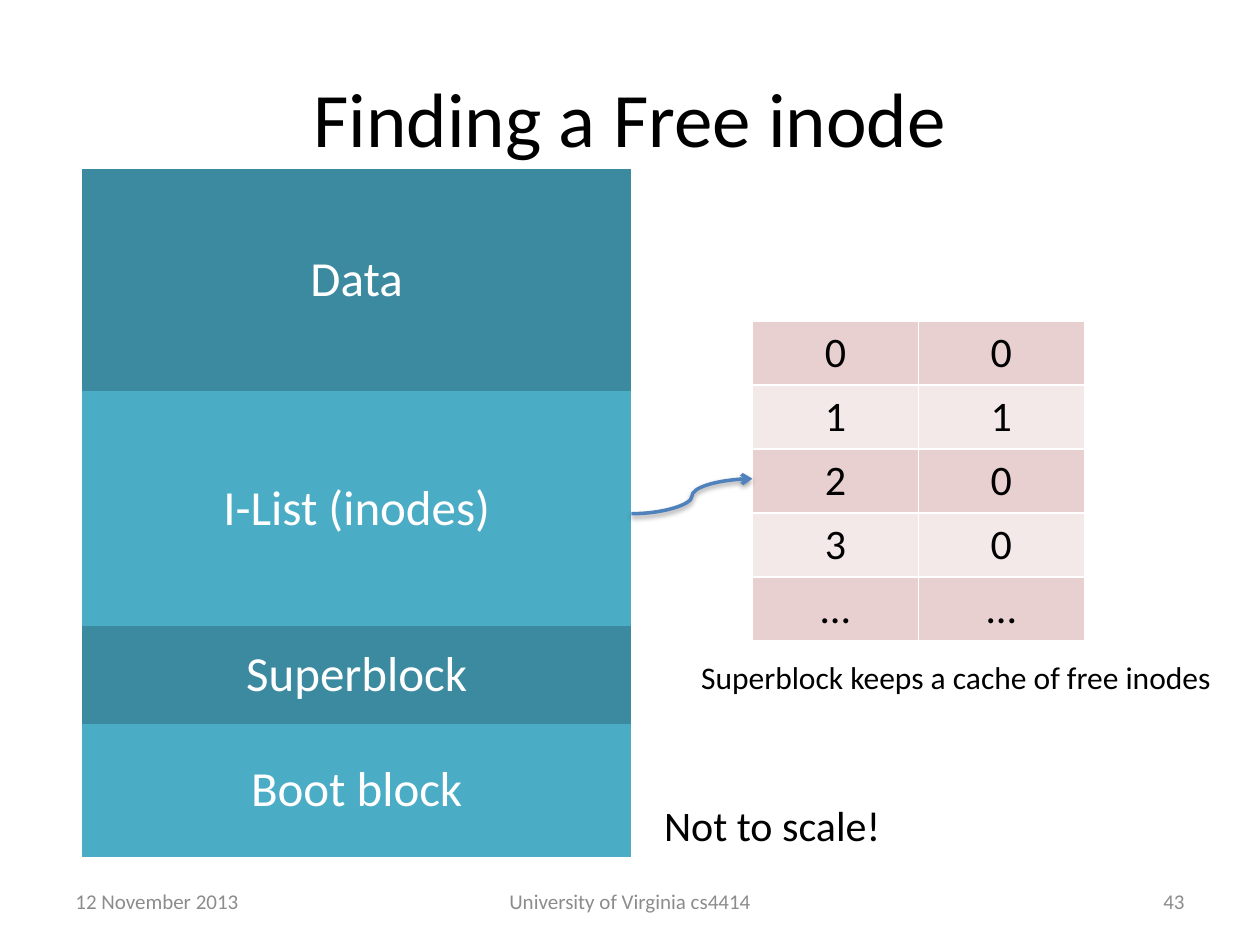
from dataclasses import dataclass

from lxml.etree import SubElement
from pptx import Presentation
from pptx.dml.color import RGBColor
from pptx.enum.shapes import MSO_CONNECTOR
from pptx.enum.text import MSO_ANCHOR as Anchor, PP_ALIGN as Align
from pptx.oxml import parse_xml
from pptx.oxml.ns import nsdecls, qn
from pptx.util import Pt

FONT = "Calibri"
BLACK = RGBColor(0x00, 0x00, 0x00)
WHITE = RGBColor(0xFF, 0xFF, 0xFF)
GRAY = RGBColor(0x8C, 0x8C, 0x8C)
DARK_TEAL = RGBColor(0x3C, 0x8A, 0x9F)
TEAL = RGBColor(0x4B, 0xAC, 0xC6)
DARK_PINK = RGBColor(0xE8, 0xD0, 0xD0)
PINK = RGBColor(0xF4, 0xE9, 0xE9)
BLUE = RGBColor(0x4F, 0x81, 0xBD)


@dataclass
class Label:
    text: str
    left: float
    top: float
    width: float
    height: float
    size: float
    color: RGBColor = BLACK
    align: Align = Align.LEFT
    anchor: Anchor = Anchor.TOP
    wrap: bool = False


@dataclass
class Grid:
    rows: list[tuple[str, ...]]
    left: float
    top: float
    column_width: float
    row_heights: list[float]
    size: float
    color: RGBColor
    bands: tuple[RGBColor, RGBColor]
    anchor: Anchor
    border: RGBColor | None = None


def footer(text: str, left: float, width: float, align: Align) -> Label:
    return Label(text, left, 500.5, width, 28.75, 12, GRAY, align, Anchor.MIDDLE, True)


DISK_LAYOUT = Grid(
    [("Data",), ("I-List (inodes)",), ("Superblock",), ("Boot block",)],
    46.8, 96.5, 314, [126.7, 134.6, 55.7, 76.3],
    28, WHITE, (DARK_TEAL, TEAL), Anchor.MIDDLE)
INODE_TABLE = Grid(
    [("0", "0"), ("1", "1"), ("2", "0"), ("3", "0"), ("…", "…")],
    430, 183.6, 94.8, [36] * 5,
    24, BLACK, (DARK_PINK, PINK), Anchor.TOP, WHITE)
LABELS = [
    footer("12 November 2013", 36, 168, Align.LEFT),
    footer("University of Virginia cs4414", 246, 228, Align.CENTER),
    footer("43", 516, 168, Align.RIGHT),
    Label("Not to scale!", 372.4, 453.6, 139.7, 36, 24),
    Label("Superblock keeps a cache of free inodes", 393.6, 372.6, 309.6, 29, 18),
]


def write(frame, text: str, *, size: float, color: RGBColor, align: Align) -> None:
    paragraph = frame.paragraphs[0]
    paragraph.alignment = align
    run = paragraph.add_run()
    run.text = text
    run.font.name = FONT
    run.font.size = Pt(size)
    run.font.color.rgb = color


def add_label(slide, label: Label) -> None:
    box = slide.shapes.add_textbox(
        Pt(label.left), Pt(label.top), Pt(label.width), Pt(label.height))
    frame = box.text_frame
    frame.word_wrap = label.wrap
    frame.vertical_anchor = label.anchor
    write(frame, label.text, size=label.size, color=label.color, align=label.align)


def set_borders(cell, color: RGBColor | None) -> None:
    """Give all four sides a 1 pt line, or no line without a colour."""
    properties = cell._tc.get_or_add_tcPr()
    for index, side in enumerate(("lnL", "lnR", "lnT", "lnB")):
        fill = (f'<a:solidFill><a:srgbClr val="{color}"/></a:solidFill>'
                if color is not None else "<a:noFill/>")
        line = parse_xml(f'<a:{side} {nsdecls("a")} w="{Pt(1)}">{fill}</a:{side}>')
        properties.insert(index, line)


def add_grid(slide, grid: Grid) -> None:
    columns = len(grid.rows[0])
    table = slide.shapes.add_table(
        len(grid.rows), columns, Pt(grid.left), Pt(grid.top),
        Pt(grid.column_width * columns), Pt(sum(grid.row_heights))).table
    table.first_row = False
    table.horz_banding = False
    for column in table.columns:
        column.width = Pt(grid.column_width)
    for index, (texts, height) in enumerate(zip(grid.rows, grid.row_heights)):
        table.rows[index].height = Pt(height)
        for cell, text in zip(table.rows[index].cells, texts):
            cell.vertical_anchor = grid.anchor
            cell.fill.solid()
            cell.fill.fore_color.rgb = grid.bands[index % 2]
            set_borders(cell, grid.border)
            write(cell.text_frame, text, size=grid.size, color=grid.color,
                  align=Align.CENTER)


def add_curved_arrow(slide, start: tuple[float, float], end: tuple[float, float]) -> None:
    arrow = slide.shapes.add_connector(
        MSO_CONNECTOR.CURVE, *(Pt(value) for value in start + end))
    arrow.line.color.rgb = BLUE
    arrow.line.width = Pt(2)
    SubElement(arrow.line._get_or_add_ln(), qn("a:tailEnd"), type="arrow")
    arrow._element.spPr.append(parse_xml(
        f'<a:effectLst {nsdecls("a")}>'
        f'<a:outerShdw blurRad="{Pt(3.1)}" dist="{Pt(1.6)}" dir="5400000" rotWithShape="0">'
        '<a:srgbClr val="000000"><a:alpha val="38000"/></a:srgbClr>'
        '</a:outerShdw></a:effectLst>'))


def add_title(slide, text: str) -> None:
    title = slide.shapes.title
    title.left, title.top, title.width, title.height = Pt(36), Pt(21.6), Pt(648), Pt(90)
    title.text_frame.vertical_anchor = Anchor.MIDDLE
    write(title.text_frame, text, size=44, color=BLACK, align=Align.CENTER)


def main() -> None:
    presentation = Presentation()
    presentation.slide_width, presentation.slide_height = Pt(720), Pt(540)
    slide = presentation.slides.add_slide(presentation.slide_layouts[5])
    add_title(slide, "Finding a Free inode")
    add_grid(slide, DISK_LAYOUT)
    add_grid(slide, INODE_TABLE)
    add_curved_arrow(slide, (360.8, 293.6), (430, 273.6))
    for label in LABELS:
        add_label(slide, label)
    presentation.save("out.pptx")


if __name__ == "__main__":
    main()
